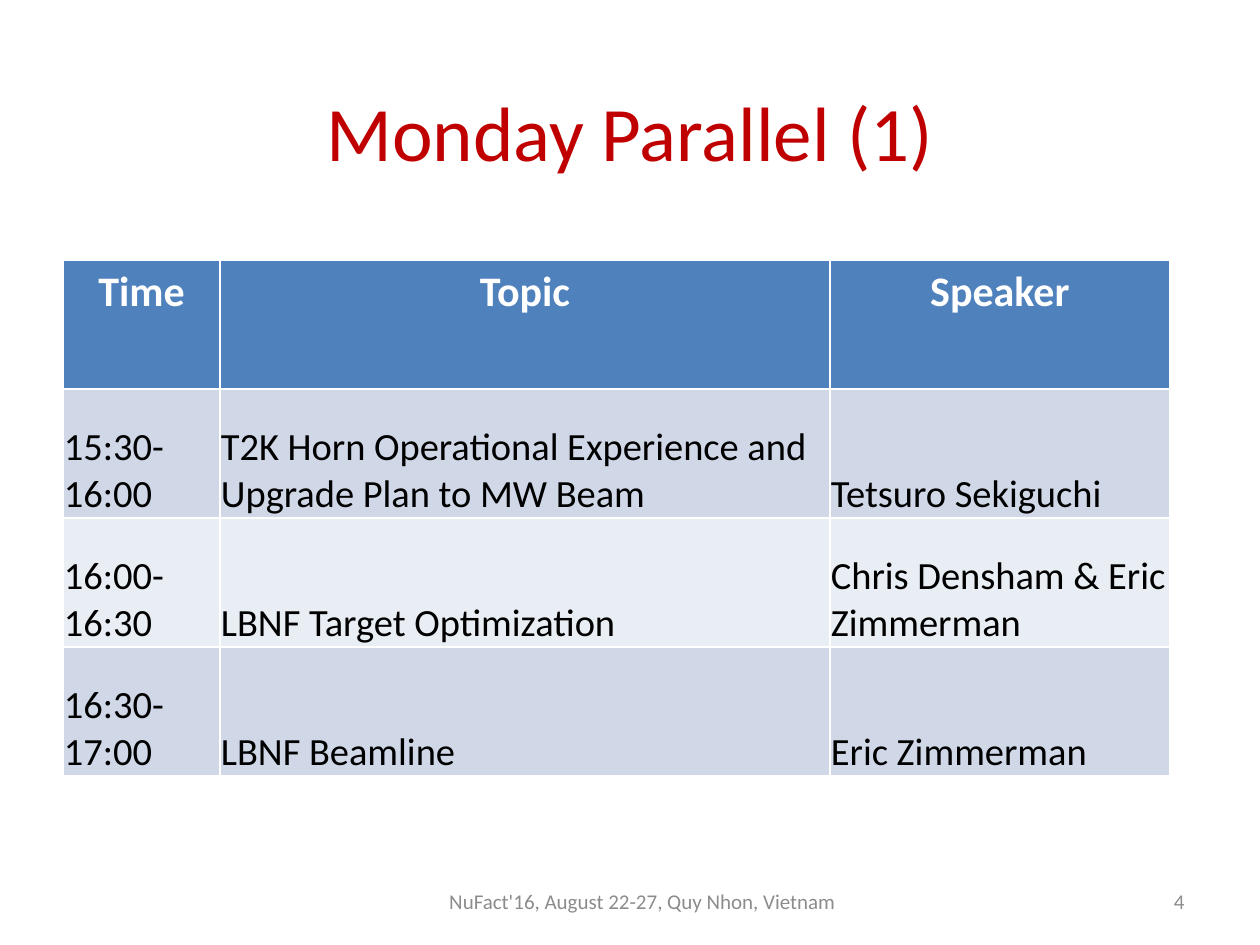
from dataclasses import dataclass

from pptx import Presentation
from pptx.dml.color import RGBColor
from pptx.enum.text import MSO_ANCHOR as Anchor, PP_ALIGN as Align
from pptx.util import Pt

# Content
TITLE = "Monday Parallel (1)"
HEADER = ("Time", "Topic", "Speaker")
TALKS = [
    ("15:30-16:00", "T2K Horn Operational Experience and Upgrade Plan to MW Beam",
     "Tetsuro Sekiguchi"),
    ("16:00-16:30", "LBNF Target Optimization", "Chris Densham & Eric Zimmerman"),
    ("16:30-17:00", "LBNF Beamline", "Eric Zimmerman"),
]
FOOTER = "NuFact'16, August 22-27, Quy Nhon, Vietnam"
PAGE_NUMBER = "4"

# Layout in px
SLIDE_SIZE = (1260, 945)
TITLE_BOX = (63, 38, 1134, 186)
FOOTER_BOX = (431, 876, 423, 50)
NUMBER_BOX = (903, 876, 294, 50)
TABLE_LEFT, TABLE_TOP = 63, 260
COLUMN_WIDTHS = (157, 610, 340)
ROW_HEIGHT = 129
CELL_INSET = 1


@dataclass(frozen=True)
class Theme:
    font: str = "Calibri"
    title: str = "C00000"
    header_fill: str = "4F81BD"
    header_text: str = "FFFFFF"
    body_text: str = "000000"
    bands: tuple = ("D0D8E8", "E9EDF4")
    footer: str = "8C8C8C"
    title_size: int = 44
    header_size: int = 24
    body_size: int = 22
    footer_size: int = 12


THEME = Theme()


def px(value):
    return round(value * 914400 / 126)


def write(text_frame, text, size, color, align, bold=False):
    text_frame.text = text
    paragraph = text_frame.paragraphs[0]
    paragraph.alignment = align
    font = paragraph.runs[0].font
    font.name, font.size, font.bold = THEME.font, Pt(size), bold
    font.color.rgb = RGBColor.from_string(color)


def add_text(slide, box, text, size, color, align):
    text_frame = slide.shapes.add_textbox(*map(px, box)).text_frame
    text_frame.word_wrap = True
    text_frame.vertical_anchor = Anchor.MIDDLE
    write(text_frame, text, size, color, align)


def fill_cell(cell, color):
    cell.fill.solid()
    cell.fill.fore_color.rgb = RGBColor.from_string(color)


def add_schedule(slide):
    row_count = len(TALKS) + 1
    table = slide.shapes.add_table(
        row_count, len(HEADER), px(TABLE_LEFT), px(TABLE_TOP),
        px(sum(COLUMN_WIDTHS)), px(ROW_HEIGHT * row_count)).table
    for column, width in zip(table.columns, COLUMN_WIDTHS):
        column.width = px(width)
    for row in table.rows:
        row.height = px(ROW_HEIGHT)

    # Header row
    for cell, text in zip(table.rows[0].cells, HEADER):
        fill_cell(cell, THEME.header_fill)
        write(cell.text_frame, text, THEME.header_size, THEME.header_text,
              Align.CENTER, bold=True)

    # Talks, in alternating bands
    for index, talk in enumerate(TALKS):
        for cell, text in zip(table.rows[index + 1].cells, talk):
            fill_cell(cell, THEME.bands[index % len(THEME.bands)])
            cell.vertical_anchor = Anchor.BOTTOM
            cell.margin_left = cell.margin_right = cell.margin_top = px(CELL_INSET)
            cell.margin_bottom = 0
            write(cell.text_frame, text, THEME.body_size, THEME.body_text, Align.LEFT)


def main():
    presentation = Presentation()
    presentation.slide_width, presentation.slide_height = map(px, SLIDE_SIZE)
    slide = presentation.slides.add_slide(presentation.slide_layouts[6])
    add_text(slide, TITLE_BOX, TITLE, THEME.title_size, THEME.title, Align.CENTER)
    add_schedule(slide)
    add_text(slide, FOOTER_BOX, FOOTER, THEME.footer_size, THEME.footer, Align.CENTER)
    add_text(slide, NUMBER_BOX, PAGE_NUMBER, THEME.footer_size, THEME.footer, Align.RIGHT)
    presentation.save("out.pptx")


if __name__ == "__main__":
    main()
